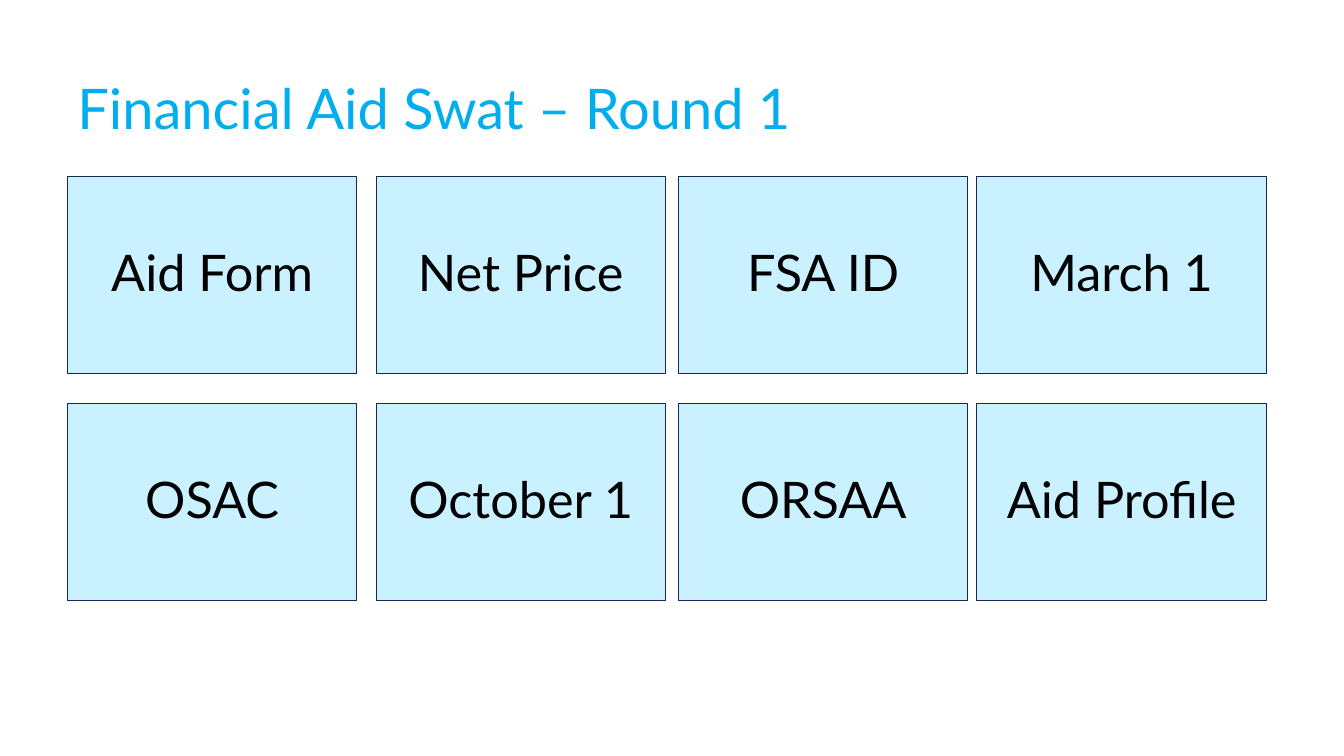
from pptx import Presentation
from pptx.dml.color import RGBColor
from pptx.enum.shapes import MSO_SHAPE
from pptx.enum.text import MSO_ANCHOR, PP_ALIGN
from pptx.util import Inches, Pt

FONT = "Lato"
TITLE_COLOR = "00AEEF"
CARD_FILL = "C9F1FF"
CARD_LINE = "1B2554"
TEXT_COLOR = "000000"

CARD_ROWS = [
    ["Aid Form", "Net Price", "FSA ID", "March 1"],
    ["OSAC", "October 1", "ORSAA", "Aid Profile"],
]
COLUMN_OFFSETS = [0, 3.06, 6.06, 9.02]
ROW_PITCH = 2.25
CARD_WIDTH, CARD_HEIGHT = 2.87, 1.96


def color(hex_string):
    return RGBColor.from_string(hex_string)


def write_line(text_frame, text, size, hex_color):
    """Fill the frame with one formatted line and return its paragraph."""
    text_frame.word_wrap = True
    paragraph = text_frame.paragraphs[0]
    paragraph.text = text
    paragraph.line_spacing = 0.9
    font = paragraph.runs[0].font
    font.name = FONT
    font.size = Pt(size)
    font.color.rgb = color(hex_color)
    return paragraph


def add_title(slide, text, left, top, width, height):
    box = slide.shapes.add_textbox(
        Inches(left), Inches(top), Inches(width), Inches(height))
    box.text_frame.vertical_anchor = MSO_ANCHOR.TOP
    write_line(box.text_frame, text, 40, TITLE_COLOR)


def add_card(slide, text, left, top):
    card = slide.shapes.add_shape(
        MSO_SHAPE.RECTANGLE, Inches(left), Inches(top),
        Inches(CARD_WIDTH), Inches(CARD_HEIGHT))
    card.shadow.inherit = False
    card.fill.solid()
    card.fill.fore_color.rgb = color(CARD_FILL)
    card.line.color.rgb = color(CARD_LINE)
    card.line.width = Pt(0.75)
    card.text_frame.vertical_anchor = MSO_ANCHOR.MIDDLE
    paragraph = write_line(card.text_frame, text, 36, TEXT_COLOR)
    paragraph.alignment = PP_ALIGN.CENTER
    paragraph.space_before = Pt(14)


def add_card_grid(slide, left, top):
    for row, terms in enumerate(CARD_ROWS):
        for offset, term in zip(COLUMN_OFFSETS, terms):
            add_card(slide, term, left + offset, top + row * ROW_PITCH)


def main():
    presentation = Presentation()
    presentation.slide_width = Inches(13.33)
    presentation.slide_height = Inches(7.5)
    slide = presentation.slides.add_slide(presentation.slide_layouts[6])
    add_title(slide, "Financial Aid Swat – Round 1", 0.67, 0.76, 12, 0.8)
    add_card_grid(slide, 0.67, 1.75)
    presentation.save("out.pptx")


if __name__ == "__main__":
    main()
